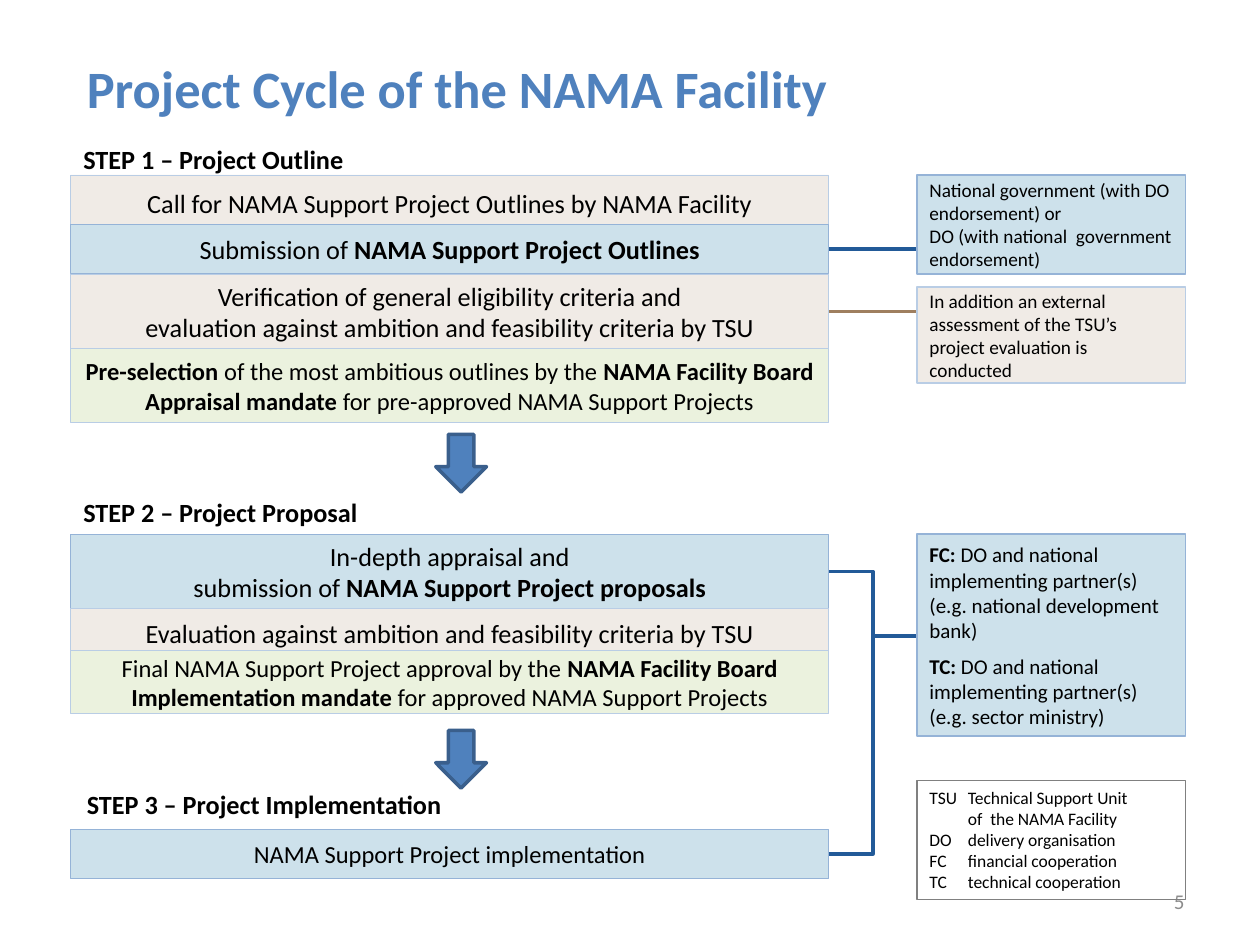
from lxml import etree
from pptx import Presentation
from pptx.dml.color import RGBColor as RGB
from pptx.enum.shapes import MSO_CONNECTOR as CONN, MSO_SHAPE as SHAPE
from pptx.enum.text import MSO_ANCHOR as ANCHOR, PP_ALIGN as ALIGN
from pptx.oxml.ns import qn
from pptx.util import Pt

COLORS = {
    "black": "000000", "title": "4F81BD", "number": "8C8C8C",
    "blue": "CDE1EB", "beige": "F0EBE6", "green": "EBF2DE",
    "edge": "95B3D7", "pale_edge": "B9CDE5", "grey": "808080",
    "link": "225A98", "brown": "9F7F5F",
    "arrow": "4F81BD", "arrow_edge": "3A5F8C",
}
EDGES = {"blue": "edge", "beige": "pale_edge", "green": "pale_edge"}


class Deck:
    font = "Calibri"

    def __init__(self, prs):
        self.slide = prs.slides.add_slide(prs.slide_layouts[6])
        self.shapes = self.slide.shapes

    def color(self, name):
        return RGB.from_string(COLORS[name])

    def fill_text(self, sp, lines, size, color="black", anchor=ANCHOR.MIDDLE,
                  wrap=True, **fmt):
        """Fill a shape with paragraphs; *asterisks* mark bold text."""
        tf = sp.text_frame
        tf.word_wrap, tf.vertical_anchor = wrap, anchor
        for i, line in enumerate(lines):
            p = tf.paragraphs[0] if i == 0 else tf.add_paragraph()
            for key, value in ({"alignment": ALIGN.LEFT} | fmt).items():
                setattr(p, key, value)
            for j, part in enumerate(line.split("*")):
                if part:
                    r = p.add_run()
                    r.text = part
                    look = {"name": self.font, "size": Pt(size), "bold": j % 2 == 1}
                    for key, value in look.items():
                        setattr(r.font, key, value)
                    r.font.color.rgb = self.color(color)
        return tf

    def text(self, x, y, w, h, line, size, **fmt):
        sp = self.shapes.add_textbox(Pt(x), Pt(y), Pt(w), Pt(h))
        self.fill_text(sp, [line], size, **fmt)

    def shape(self, kind, x, y, w, h, fill, edge, weight):
        sp = self.shapes.add_shape(kind, Pt(x), Pt(y), Pt(w), Pt(h))
        sp.shadow.inherit = False
        if fill:
            sp.fill.solid()
            sp.fill.fore_color.rgb = self.color(fill)
        else:
            sp.fill.background()
        sp.line.color.rgb = self.color(edge)
        sp.line.width = Pt(weight)
        return sp

    def box(self, x, y, w, h, fill, weight, lines, size, **fmt):
        sp = self.shape(SHAPE.RECTANGLE, x, y, w, h, fill, EDGES[fill], weight)
        self.fill_text(sp, lines, size, **fmt)

    def connect(self, kind, x1, y1, x2, y2, color):
        c = self.shapes.add_connector(kind, Pt(x1), Pt(y1), Pt(x2), Pt(y2))
        c.line.color.rgb = self.color(color)
        c.line.width = Pt(2.25)
        etree.SubElement(c._element.spPr, qn("a:effectLst"))

    def legend(self, x, y, w, h, entries, indent):
        """List abbreviations with a hanging indent."""
        sp = self.shape(SHAPE.RECTANGLE, x, y, w, h, None, "grey", 0.75)
        tf = self.fill_text(sp, entries, 10, anchor=ANCHOR.TOP)
        for p in tf.paragraphs:
            pPr = p._p.get_or_add_pPr()
            pPr.set("marL", str(Pt(indent)))
            pPr.set("indent", str(-Pt(indent) if "\t" in p.text else 0))


LEFT, WIDTH = 40.5, 433
SIDE, SIDE_W = 524, 153.5
RIGHT = LEFT + WIDTH
SPACED = {"space_after": Pt(6)}
LOOSE = {"line_spacing": 1.2, "space_before": Pt(6)}

HEADINGS = [
    (40.5, 78.5, "STEP 1 – Project Outline"),
    (40.5, 280, "STEP 2 – Project Proposal"),
    (42.5, 447, "STEP 3 – Project Implementation"),
]

# Top of each step, then its stacked rows: height, fill, size, lines, format
STEPS = [
    (100, [
        (28.3, "beige", 15, ["Call for NAMA Support Project Outlines by NAMA Facility"], LOOSE),
        (28.3, "blue", 15, ["Submission of *NAMA Support Project Outlines*"], SPACED),
        (42.5, "beige", 15, ["Verification of general eligibility criteria and",
                             "evaluation against ambition and feasibility criteria by TSU"], {}),
        (42.5, "green", 14, ["*Pre-selection* of the most ambitious outlines by the *NAMA Facility Board*",
                             "*Appraisal mandate* for pre-approved NAMA Support Projects"], {}),
    ]),
    (305.3, [
        (42.5, "blue", 15, ["In-depth appraisal and",
                            "submission of *NAMA Support Project proposals*"], {}),
        (24.2, "beige", 15, ["Evaluation against ambition and feasibility criteria by TSU"], LOOSE),
        (36, "green", 14, ["Final NAMA Support Project approval by the *NAMA Facility Board*",
                           "*Implementation mandate* for approved NAMA Support Projects"], {}),
    ]),
    (473.8, [(28.3, "blue", 14, ["NAMA Support Project implementation"], SPACED)]),
]

# Side notes: top, height, fill, size, lines, format
NOTES = [
    (100, 56.6, "blue", 11, ["National government (with DO endorsement) or",
                             "DO (with national  government endorsement)"], {}),
    (163.8, 55.2, "beige", 11, ["In addition an external assessment of the TSU’s "
                                "project evaluation is conducted"], {}),
    (305.3, 115.5, "blue", 12, [
        "*FC:* DO and national implementing partner(s) (e.g. national development bank)",
        "*TC:* DO and national implementing partner(s) (e.g. sector ministry)"], SPACED),
]

LINKS = [
    (CONN.STRAIGHT, 142.4, 142.4, "link"),
    (CONN.STRAIGHT, 178, 178, "brown"),
    (CONN.ELBOW, 326.6, 363.4, "link"),
    (CONN.ELBOW, 488, 363.4, "link"),
]

LEGEND = ["TSU\tTechnical Support Unit", "of  the NAMA Facility",
          "DO\tdelivery organisation", "FC\tfinancial cooperation",
          "TC\ttechnical cooperation"]


def main():
    prs = Presentation()
    prs.slide_width, prs.slide_height = Pt(720), Pt(540)
    s = Deck(prs)

    # Page number, title and step headings
    s.text(516, 500.5, 168, 28.8, "5", 12, color="number", alignment=ALIGN.RIGHT)
    s.text(42.5, 21.6, 605.5, 57, "*Project Cycle of the NAMA Facility*", 30, color="title")
    for x, y, heading in HEADINGS:
        s.text(x, y, 444, 25.2, f"*{heading}*", 15, anchor=ANCHOR.TOP)

    # Links between steps and notes
    for kind, y1, y2, color in LINKS:
        s.connect(kind, RIGHT, y1, SIDE, y2, color)

    # Stacked rows of each step
    for y, rows in STEPS:
        for h, fill, size, lines, fmt in rows:
            s.box(LEFT, y, WIDTH, h, fill, 0.5, lines, size,
                  wrap=False, alignment=ALIGN.CENTER, **fmt)
            y += h

    # Side notes
    for y, h, fill, size, lines, fmt in NOTES:
        s.box(SIDE, y, SIDE_W, h, fill, 1, lines, size, **fmt)

    # Arrows to the next step
    for y in (248.2, 417.4):
        s.shape(SHAPE.DOWN_ARROW, 249, y, 29, 33, "arrow", "arrow_edge", 2)

    # Abbreviations
    s.legend(SIDE, 446, SIDE_W, 68, LEGEND, 22)
    prs.save("out.pptx")


if __name__ == "__main__":
    main()
